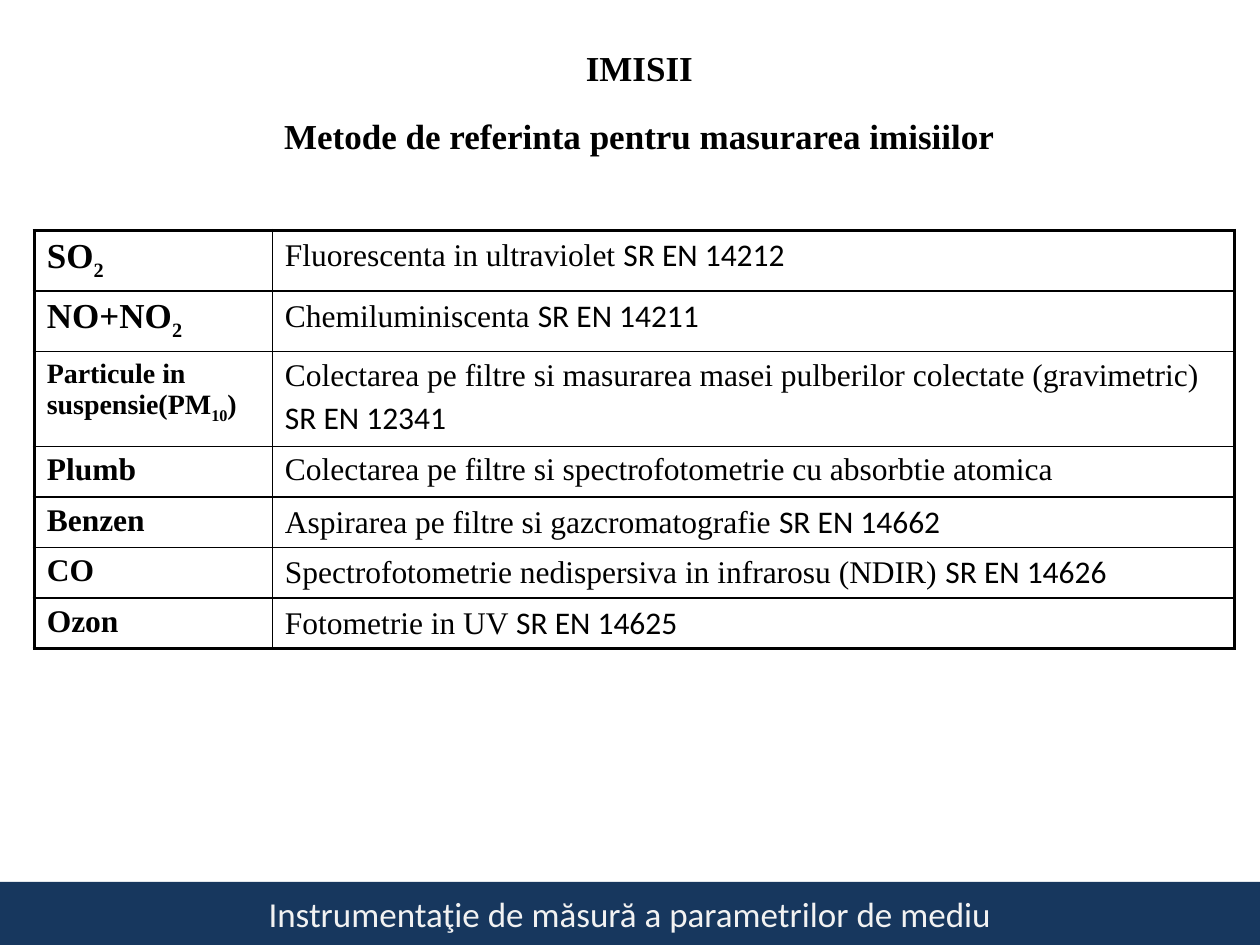
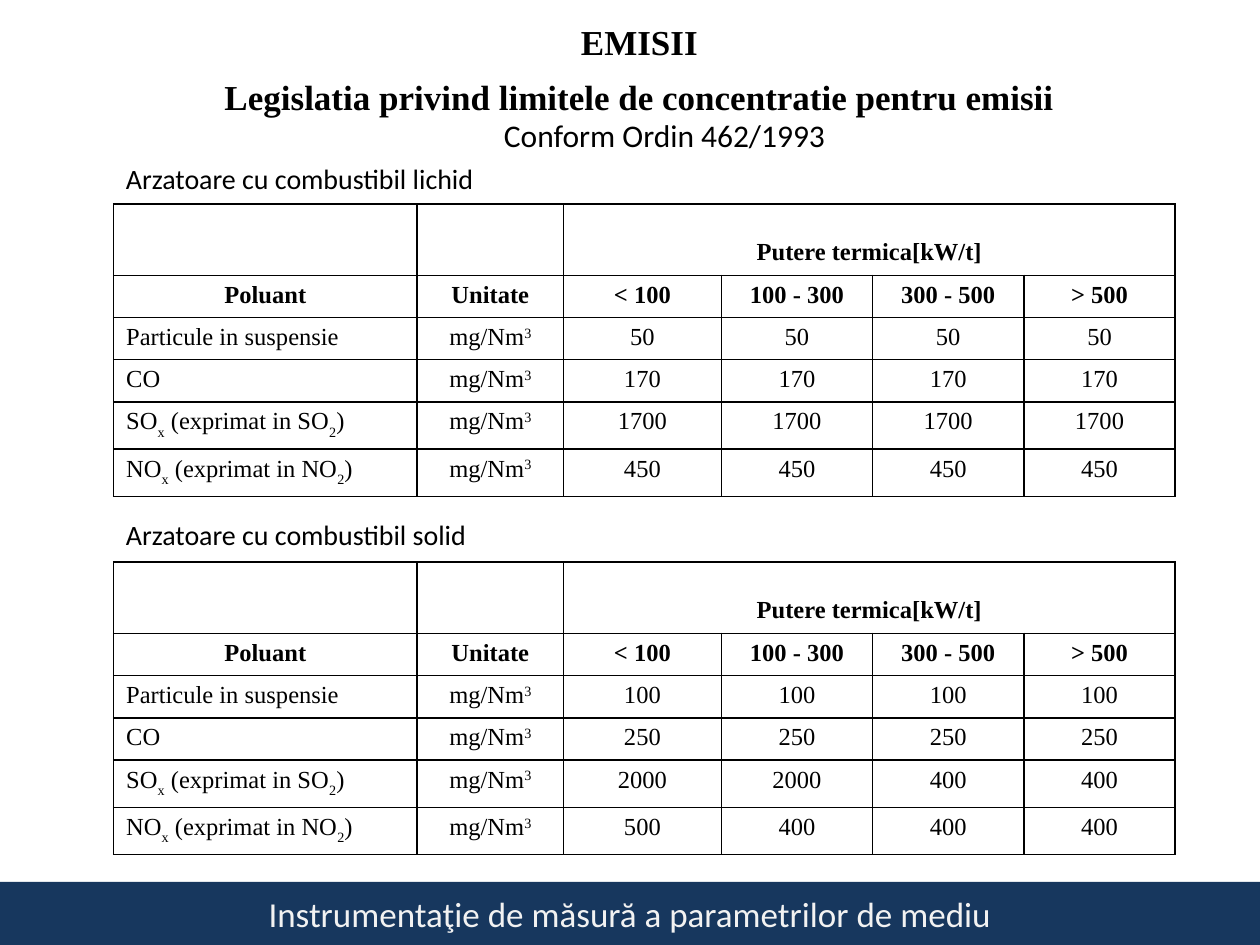
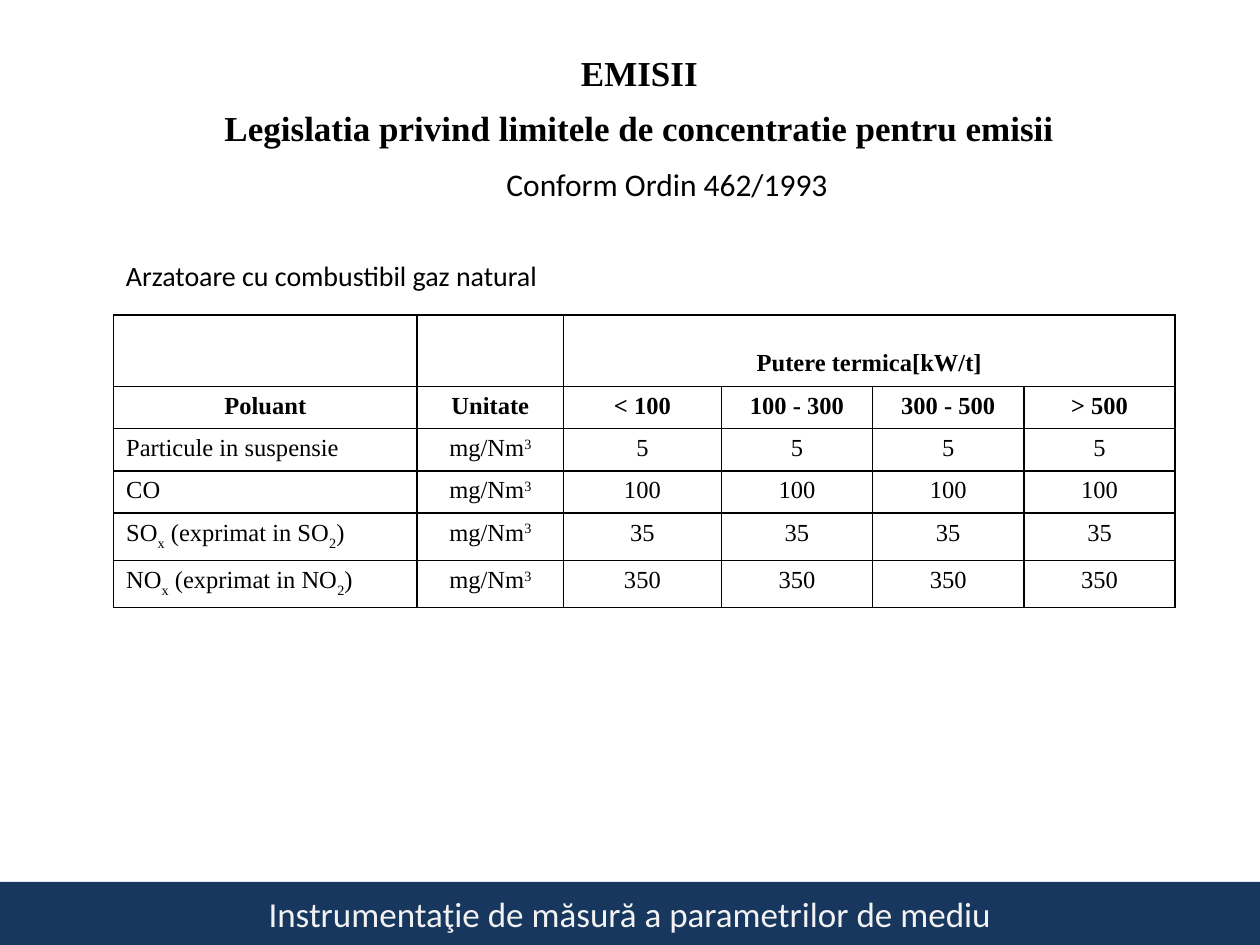
from lxml import etree
from pptx import Presentation
from pptx.dml.color import RGBColor
from pptx.enum.shapes import MSO_SHAPE
from pptx.enum.text import MSO_ANCHOR, PP_ALIGN
from pptx.oxml.ns import qn
from pptx.util import Cm, Pt

LEFT, CENTER = PP_ALIGN.LEFT, PP_ALIGN.CENTER
TOP, MIDDLE, BOTTOM = MSO_ANCHOR.TOP, MSO_ANCHOR.MIDDLE, MSO_ANCHOR.BOTTOM
RECTANGLE = MSO_SHAPE.RECTANGLE

SERIF, SANS = "Times New Roman", "Calibri"
BLACK, NAVY, PALE = "000000", "17375E", "F2F2F2"
THIN, THICK = 1, 2.25
TITLE_ONLY = 5

FOOTER = "Instrumentaţie de măsură a parametrilor de mediu"
REGULATION = "Conform Ordin 462/1993"
EMISSION_TITLE = "EMISII"
EMISSION_SUBTITLE = "Legislatia privind limitele de concentratie pentru emisii"

METHODS = [
    ("SO|2|", 20, "Fluorescenta in ultraviolet ", "SR EN 14212"),
    ("NO+NO|2|", 20, "Chemiluminiscenta ", "SR EN 14211"),
    ("Particule in suspensie(PM|10|)", 16,
     "Colectarea pe filtre si masurarea masei pulberilor colectate (gravimetric)\n", "SR EN 12341"),
    ("Plumb", 18, "Colectarea pe filtre si spectrofotometrie cu absorbtie atomica", ""),
    ("Benzen", 18, "Aspirarea pe filtre si gazcromatografie ", "SR EN 14662"),
    ("CO", 18, "Spectrofotometrie nedispersiva in infrarosu (NDIR) ", "SR EN 14626"),
    ("Ozon", 18, "Fotometrie in UV ", "SR EN 14625"),
]
METHOD_COLUMNS = [4.8, 19.4]
METHOD_ROWS = [1.22, 1.22, 1.9] + [1.02] * 4

LIMIT_HEADINGS = ["Poluant", "Unitate", "< 100", "100 - 300", "300 - 500", "> 500"]
POLLUTANTS = ["Particule in suspensie", "CO", "SO|x| (exprimat in SO|2|)", "NO|x| (exprimat in NO|2|)"]
LIMIT_COLUMNS = [6.12, 2.95, 3.18] + [3.05] * 3
LIMIT_ROWS = [1.44] + [0.85] * 3 + [0.95] * 2

LIQUID_LIMITS = [[50] * 4, [170] * 4, [1700] * 4, [450] * 4]
SOLID_LIMITS = [[100] * 4, [250] * 4, [2000, 2000, 400, 400], [500, 400, 400, 400]]
GAS_LIMITS = [[5] * 4, [100] * 4, [35] * 4, [350] * 4]


def rgb(value):
    return RGBColor.from_string(value)


class Deck:
    def __init__(self):
        self.deck = Presentation()
        self.deck.slide_width, self.deck.slide_height = Cm(25.4), Cm(19.05)
        self.page = None

    def start_page(self, title, subtitle, title_top, subtitle_top):
        self.page = self.deck.slides.add_slide(self.deck.slide_layouts[TITLE_ONLY])
        box = self.page.shapes.title
        box.left, box.top, box.width, box.height = Cm(0.89), Cm(title_top), Cm(24), Cm(1.09)
        box.text_frame.vertical_anchor = TOP
        self.fill_para(box.text_frame.paragraphs[0], title, 20, bold=True, align=CENTER)
        self.text(subtitle, 0.89, subtitle_top, 24, 1.09, 20, SERIF, bold=True, align=CENTER, wrap=True)

    def fill_para(self, para, text, size, font=SERIF, bold=False, align=LEFT, color=BLACK, shift=0):
        para.alignment = align
        para.font.name, para.font.size, para.font.bold = font, Pt(size), bold
        para.font.color.rgb = rgb(color)
        for index, piece in enumerate(text.split("|")):
            if piece:
                span = para.add_run()
                span.text = piece
                if index % 2:
                    span._r.get_or_add_rPr().set("baseline", str(shift * 1000))

    def text(self, text, left, top, width, height, size, font=SANS, bold=False,
             align=LEFT, anchor=TOP, wrap=False):
        box = self.page.shapes.add_textbox(Cm(left), Cm(top), Cm(width), Cm(height))
        box.text_frame.word_wrap = wrap
        box.text_frame.vertical_anchor = anchor
        self.fill_para(box.text_frame.paragraphs[0], text, size, font, bold, align)

    def footer(self):
        band = self.page.shapes.add_shape(RECTANGLE, 0, Cm(17.78), Cm(25.4), Cm(1.27))
        band.shadow.inherit = False
        band.fill.solid()
        band.fill.fore_color.rgb = rgb(NAVY)
        band.line.fill.background()
        band.text_frame.vertical_anchor = MIDDLE
        self.fill_para(band.text_frame.paragraphs[0], FOOTER, 20, SANS, align=CENTER, color=PALE)

    def borders(self, cell, widths):
        properties = cell._tc.get_or_add_tcPr()
        for index, (side, width) in enumerate(zip(("lnL", "lnR", "lnT", "lnB"), widths)):
            line = etree.Element(qn(f"a:{side}"), w=str(Pt(width)))
            fill = etree.SubElement(line, qn("a:solidFill"))
            etree.SubElement(fill, qn("a:srgbClr"), val=BLACK)
            properties.insert(index, line)

    def table(self, left, top, columns, rows, outline):
        frame = self.page.shapes.add_table(
            len(rows), len(columns), Cm(left), Cm(top), Cm(sum(columns)), Cm(sum(rows)))
        table = frame.table
        table.first_row = table.horz_banding = False
        for column, width in zip(table.columns, columns):
            column.width = Cm(width)
        last_row, last_column = len(rows) - 1, len(columns) - 1
        for row_index, (row, height) in enumerate(zip(table.rows, rows)):
            row.height = Cm(height)
            for column_index, cell in enumerate(row.cells):
                cell.fill.background()
                on_edge = (column_index == 0, column_index == last_column,
                           row_index == 0, row_index == last_row)
                self.borders(cell, [outline if edge else THIN for edge in on_edge])
        return table

    def methods_table(self):
        table = self.table(0.69, 4.65, METHOD_COLUMNS, METHOD_ROWS, THICK)
        for row, (substance, size, method, standard) in zip(table.rows, METHODS):
            name_cell, method_cell = row.cells
            self.fill_para(name_cell.text_frame.paragraphs[0], substance, size, bold=True, shift=-25)
            para = method_cell.text_frame.paragraphs[0]
            self.fill_para(para, method.strip("\n"), 18)
            if method.endswith("\n"):
                para = method_cell.text_frame.add_paragraph()
                para.space_before = Pt(3.6)
                self.fill_para(para, standard, 18, SANS)
            elif standard:
                span = para.add_run()
                span.text = standard
                span.font.name = SANS

    def limits(self, caption, caption_top, caption_width, table_top, values):
        self.text(caption, 2.29, caption_top, caption_width, 0.94, 16, anchor=MIDDLE)
        table = self.table(2.29, table_top, LIMIT_COLUMNS, LIMIT_ROWS, THIN)
        power = table.cell(0, 2)
        power.merge(table.cell(0, 5))
        power.vertical_anchor = BOTTOM
        power.margin_bottom = Cm(0.2)
        self.fill_para(power.text_frame.paragraphs[0], "Putere termica[kW/t]", 14, bold=True, align=CENTER)
        body = [[name, "mg/Nm|3|", *map(str, line)] for name, line in zip(POLLUTANTS, values)]
        for row_index, line in enumerate([LIMIT_HEADINGS] + body, 1):
            heading = row_index == 1
            for column_index, text in enumerate(line):
                is_name = column_index == 0
                self.fill_para(table.cell(row_index, column_index).text_frame.paragraphs[0], text, 14,
                               bold=heading, align=LEFT if is_name and not heading else CENTER,
                               shift=-30 if is_name else 30)


def main():
    deck = Deck()

    deck.start_page("IMISII", "Metode de referinta pentru masurarea imisiilor", 0.81, 2.18)
    deck.methods_table()
    deck.footer()

    deck.start_page(EMISSION_TITLE, EMISSION_SUBTITLE, 0.28, 1.4)
    deck.limits("Arzatoare cu combustibil lichid", 3.12, 7.59, 4.11, LIQUID_LIMITS)
    deck.limits("Arzatoare cu combustibil solid", 10.31, 7.47, 11.33, SOLID_LIMITS)
    deck.text(REGULATION, 9.91, 2.21, 7.16, 1.02, 18)
    deck.footer()

    deck.start_page(EMISSION_TITLE, EMISSION_SUBTITLE, 0.91, 2.03)
    deck.limits("Arzatoare cu combustibil gaz natural", 5.08, 8.89, 6.35, GAS_LIMITS)
    deck.text(REGULATION, 9.96, 3.2, 7.16, 1.02, 18)
    deck.footer()

    deck.deck.save("out.pptx")


if __name__ == "__main__":
    main()
